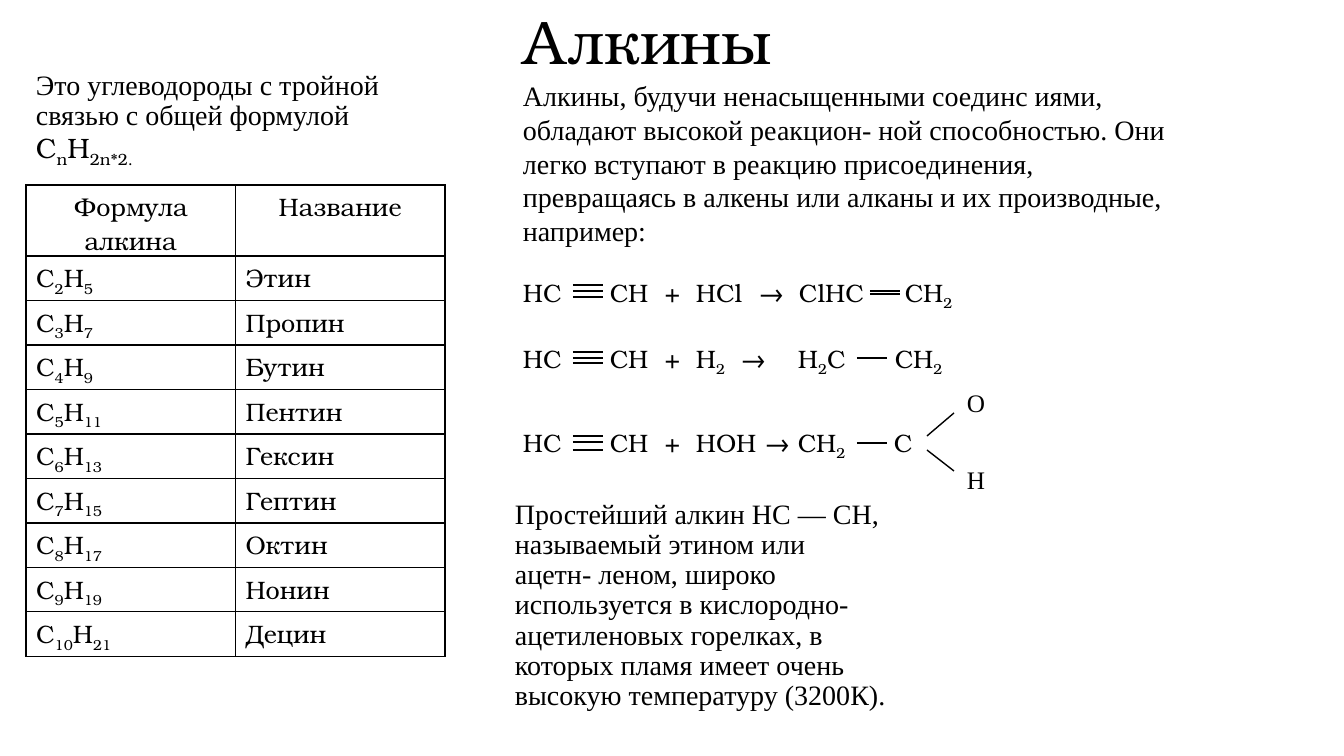
"""Builds a slide on alkynes: their formulas, names and reactions."""
from dataclasses import dataclass

from lxml import etree
from pptx import Presentation
from pptx.dml.color import RGBColor
from pptx.enum.shapes import MSO_CONNECTOR
from pptx.enum.text import MSO_ANCHOR, MSO_AUTO_SIZE, PP_ALIGN
from pptx.oxml.ns import qn
from pptx.util import Pt

STRAIGHT = MSO_CONNECTOR.STRAIGHT
MIDDLE, TOP = MSO_ANCHOR.MIDDLE, MSO_ANCHOR.TOP
NO_FIT = MSO_AUTO_SIZE.NONE
LEFT, CENTER = PP_ALIGN.LEFT, PP_ALIGN.CENTER
SLIDE_W, SLIDE_H = 1344, 756
SCALE = 12192000 / SLIDE_W


@dataclass(frozen=True)
class Theme:
    """Colours, fonts and type sizes."""
    ink: str = "000000"
    paper: str = "FFFFFF"
    serif: str = "TeX Gyre Bonum"
    text: str = "Times New Roman"
    title: int = 44
    body: int = 20
    formula: int = 18
    rule: int = 1


def px(n):
    """Turns px into EMU."""
    return round(n * SCALE)


def write(p, text, font, size, color, align=LEFT, spacing=None):
    """Adds text to a paragraph; parts in braces become subscripts."""
    p.alignment = align
    if spacing:
        p.line_spacing = spacing
    for i, part in enumerate(text.replace("}", "{").split("{")):
        if not part:
            continue
        r = p.add_run()
        r.text = part
        r.font.name, r.font.size = font, Pt(size)
        r.font.color.rgb = RGBColor.from_string(color)
        if i % 2:
            r.font._element.set("baseline", "-25000")


class Deck:
    """Holds the theme and the current slide."""

    def __init__(self, prs, theme):
        """Adds a title-only slide."""
        self.theme = theme
        self.s = prs.slides.add_slide(prs.slide_layouts[5])

    def title(self, text, x, y, w, h):
        """Places and fills the title."""
        t = self.theme
        sp = self.s.shapes.title
        sp.left, sp.top, sp.width, sp.height = map(px, (x, y, w, h))
        tf = sp.text_frame
        tf.auto_size, tf.vertical_anchor = NO_FIT, MIDDLE
        write(tf.paragraphs[0], text, t.serif, t.title, t.ink, spacing=0.9)

    def text(self, text, x, y, w, h, font=None, size=None, spacing=None, tabs=()):
        """Adds a wrapping text box and returns its paragraph."""
        t = self.theme
        tf = self.s.shapes.add_textbox(*map(px, (x, y, w, h))).text_frame
        tf.word_wrap, tf.vertical_anchor = True, TOP
        p = tf.paragraphs[0]
        write(p, text, font or t.text, size or t.body, t.ink, spacing=spacing)
        if tabs:
            stops = etree.SubElement(p._p.get_or_add_pPr(), qn("a:tabLst"))
            for stop in tabs:
                etree.SubElement(stops, qn("a:tab"), pos=str(px(stop)), algn="l")
        return p

    def line(self, x1, y1, x2, y2):
        """Draws a bond."""
        ln = self.s.shapes.add_connector(STRAIGHT, *map(px, (x1, y1, x2, y2)))
        ln.line.color.rgb = RGBColor.from_string(self.theme.ink)
        ln.line.width = Pt(self.theme.rule)
        etree.SubElement(ln._element.spPr, qn("a:effectLst"))

    def cell(self, cell, text, align):
        """Fills, borders and writes one table cell."""
        t = self.theme
        write(cell.text_frame.paragraphs[0], text, t.serif, t.formula, t.ink, align)
        tc = cell._tc.get_or_add_tcPr()
        for side in ("a:lnL", "a:lnR", "a:lnT", "a:lnB"):
            ln = etree.SubElement(tc, qn(side), w=str(Pt(t.rule)))
            fill = etree.SubElement(ln, qn("a:solidFill"))
            etree.SubElement(fill, qn("a:srgbClr"), val=t.ink)
        cell.fill.solid()
        cell.fill.fore_color.rgb = RGBColor.from_string(t.paper)

    def table(self, rows, x, y, w, head_h, row_h):
        """Adds a table whose first row is its heading."""
        h = head_h + row_h * (len(rows) - 1)
        gf = self.s.shapes.add_table(len(rows), len(rows[0]), *map(px, (x, y, w, h)))
        tbl = gf.table
        tbl.first_row = tbl.horz_banding = False
        for i, row in enumerate(rows):
            tbl.rows[i].height = px(row_h if i else head_h)
            for j, text in enumerate(row):
                cell = tbl.cell(i, j)
                if i == 0:
                    cell.margin_bottom = 0
                self.cell(cell, text, LEFT if i else CENTER)


ALKYNES = [
    ("Формула алкина", "Название"),
    ("C{2}H{5}", "Этин"),
    ("C{3}H{7}", "Пропин"),
    ("C{4}H{9}", "Бутин"),
    ("C{5}H{11}", "Пентин"),
    ("C{6}H{13}", "Гексин"),
    ("C{7}H{15}", "Гептин"),
    ("C{8}H{17}", "Октин"),
    ("C{9}H{19}", "Нонин"),
    ("C{10}H{21}", "Децин"),
]
START_TABS = (87, 142, 173)
TRIPLE_X, DOUBLE_X, SINGLE_X = 573, 870, 857
BOND_W = 30
REACTIONS = [
    (272, "HC\tCH\t+\tHCl\t→\tClHC\tCH{2}", (236, 276, 382),
     {TRIPLE_X: (285, 291, 297), DOUBLE_X: (291, 294)}),
    (338, "HC\tCH\t+\tH{2}\t→\tH{2}C\tCH{2}", (218, 275, 372),
     {TRIPLE_X: (352, 358, 363), SINGLE_X: (358,)}),
    (422, "HC\tCH\t+\tHOH\t→\tCH{2}\tC", (242, 275, 371),
     {TRIPLE_X: (436, 442, 450), SINGLE_X: (443,)}),
]
ALDEHYDE = [("O", 382, 436, 413), ("H", 459, 450, 471)]


def main():
    """Builds and saves the slide."""
    prs = Presentation()
    prs.slide_width, prs.slide_height = px(SLIDE_W), px(SLIDE_H)
    t = Theme()
    deck = Deck(prs, t)
    deck.title("Алкины", 513, 0, 280, 90)
    p = deck.text("Это углеводороды с тройной связью с общей формулой ",
                  26, 66, 390, 110, spacing=0.9)
    write(p, "C{n}H{2n*2.}", t.serif, t.body, t.ink)
    deck.text("Простейший алкин НС — СН, называемый этином или ацетн- леном, широко "
              "используется в кислородно-ацетиленовых горелках, в которых пламя "
              "имеет очень высокую температуру (3200К).",
              505, 495, 391, 248, spacing=0.9)
    deck.text("Алкины, будучи ненасыщенными соединс иями, обладают высокой реакцион- "
              "ной способностью. Они легко вступают в реакцию присоединения, "
              "превращаясь в алкены или алканы и их производные, например:",
              513, 74, 672, 179)
    for y, text, tabs, bonds in REACTIONS:
        deck.text(text, 513, y, 672, 40, font=t.serif, size=t.formula,
                  tabs=START_TABS + tabs)
        for x, levels in bonds.items():
            for level in levels:
                deck.line(x, level, x + BOND_W, level)
    for atom, y, start, end in ALDEHYDE:
        deck.text(atom, 957, y, 40, 40, size=t.formula)
        deck.line(927, start, 954, end)
    deck.table(ALKYNES, 26, 185, 419, 71, 44)
    prs.save("out.pptx")


if __name__ == "__main__":
    main()
